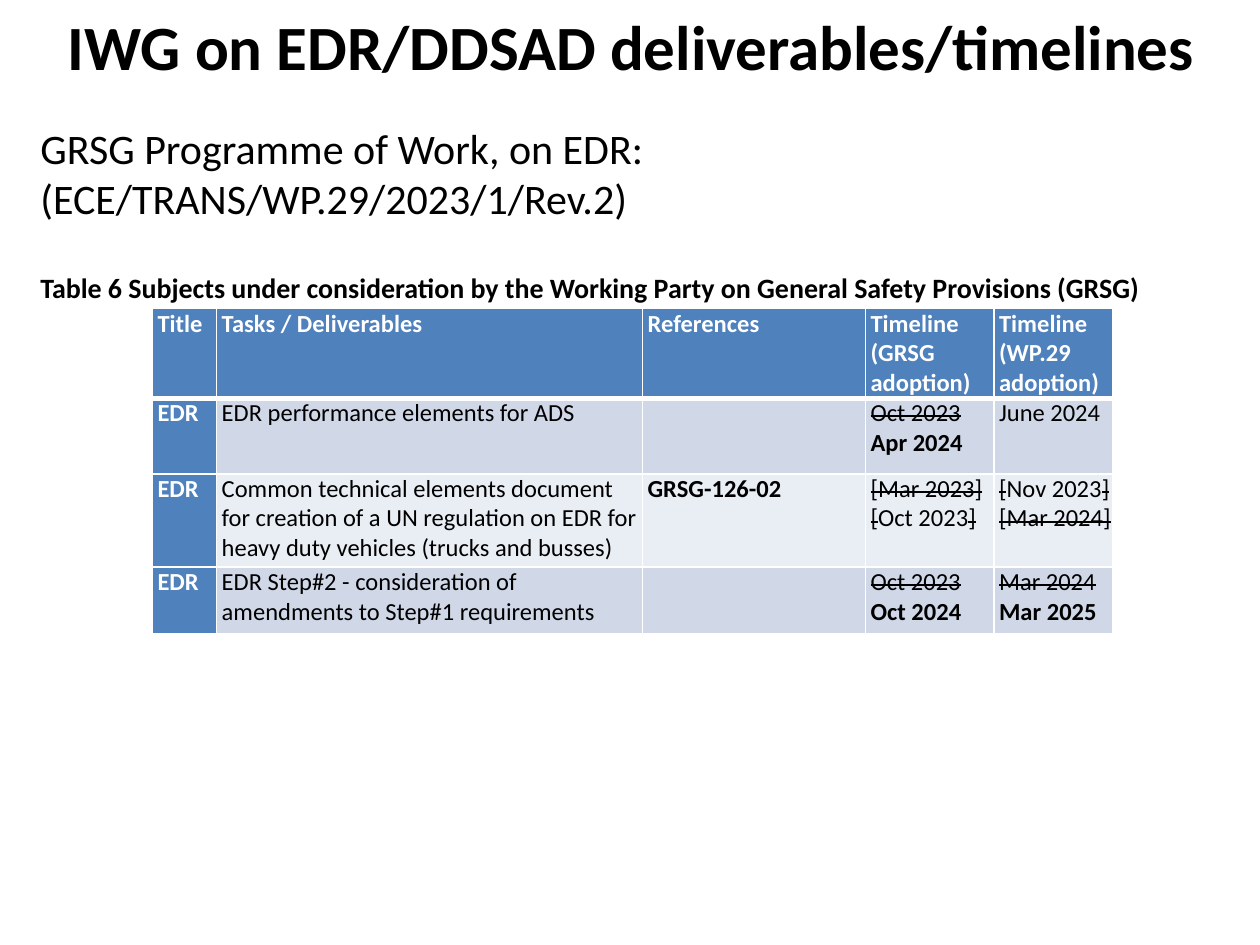
import pptx
import pptx.dml.color
import pptx.enum.text
import pptx.oxml.ns
import pptx.util
from lxml import etree

Inches = pptx.util.Inches
Pt = pptx.util.Pt

FONT = "Calibri"
BLACK, WHITE = "000000", "FFFFFF"
HEADER_BLUE = "4F81BD"
BANDS = ("D0D8E8", "E9EDF4")
PLAIN, BOLD, STRUCK = "plain", "bold", "struck"

COLUMN_WIDTHS = (0.51, 3.38, 1.77, 1.02, 0.94)
ROW_HEIGHTS = (0.68, 0.6, 0.74, 0.53)

# Header cells: one entry per paragraph
HEADERS = (
    ("Title",),
    ("Tasks / Deliverables",),
    ("References",),
    ("Timeline", "(GRSG adoption)"),
    ("Timeline", "(WP.29 adoption)"),
)

# Body cells after the "EDR" column: runs of (text, style)
SUBJECTS = (
    (
        [("EDR performance elements for ADS", PLAIN)],
        [],
        [("Oct 2023\n", STRUCK), ("Apr 2024", BOLD)],
        [("June 2024", PLAIN)],
    ),
    (
        [("Common technical elements document for creation of a UN regulation "
          "on EDR for heavy duty vehicles (trucks and busses)", PLAIN)],
        [("GRSG-126-02", BOLD)],
        [("[Mar 2023]\n[", STRUCK), ("Oct 2023", PLAIN), ("]", STRUCK)],
        [("[", STRUCK), ("Nov 2023", PLAIN), ("]\n[Mar 2024]", STRUCK)],
    ),
    (
        [("EDR Step#2 - consideration of amendments to Step#1 requirements", PLAIN)],
        [],
        [("Oct 2023\n", STRUCK), ("Oct 2024", BOLD)],
        [("Mar 2024\n", STRUCK), ("Mar 2025", BOLD)],
    ),
)


def color(hex_string):
    return pptx.dml.color.RGBColor.from_string(hex_string)


def add_child(parent, tag, **attributes):
    return etree.SubElement(parent, pptx.oxml.ns.qn(tag), **attributes)


def add_text(paragraph, text, size, hex_color=BLACK, style=PLAIN):
    """Add text as runs, turning each newline into a line break."""
    for index, line in enumerate(text.split("\n")):
        if index:
            paragraph.add_line_break()
            add_child(paragraph._p[-1], "a:rPr", sz=str(size * 100))
        if not line:
            continue
        run = paragraph.add_run()
        run.text = line
        run.font.name = FONT
        run.font.size = Pt(size)
        run.font.bold = style == BOLD
        run.font.color.rgb = color(hex_color)
        if style == STRUCK:
            run.font._element.set("strike", "sngStrike")


def set_spacing(paragraph, before, after=0):
    paragraph.space_before = Pt(before)
    paragraph.space_after = Pt(after)


def place(shape, left, top, width, height):
    shape.left, shape.top = Inches(left), Inches(top)
    shape.width, shape.height = Inches(width), Inches(height)


def fill_title(title):
    place(title, 0.01, 0.13, 10, 0.46)
    frame = title.text_frame
    frame.auto_size = pptx.enum.text.MSO_AUTO_SIZE.NONE
    frame.vertical_anchor = pptx.enum.text.MSO_ANCHOR.MIDDLE
    paragraph = frame.paragraphs[0]
    paragraph.alignment = pptx.enum.text.PP_ALIGN.CENTER
    add_text(paragraph, "IWG on EDR/DDSAD deliverables/timelines", 36, style=BOLD)


def fill_body(body):
    place(body, 0.22, 0.92, 9.74, 6.06)
    frame = body.text_frame
    frame.auto_size = pptx.enum.text.MSO_AUTO_SIZE.NONE
    programme, caption = frame.paragraphs[0], frame.add_paragraph()
    for paragraph, before in ((programme, 6.4), (caption, 27.4)):
        set_spacing(paragraph, before)
        properties = paragraph._p.get_or_add_pPr()
        properties.set("marL", "0")
        properties.set("indent", "0")
        add_child(properties, "a:buNone")
    add_text(programme, "GRSG Programme of Work, on EDR:\n(ECE/TRANS/WP.29/2023/1/Rev.2)", 24)
    add_text(caption, "Table 6 Subjects under consideration by the Working Party "
                      "on General Safety Provisions (GRSG)", 16, style=BOLD)


def format_cell(cell, fill, top_border=1, bottom_border=1):
    cell.margin_left = cell.margin_right = cell.margin_top = cell.margin_bottom = 0
    properties = cell._tc.get_or_add_tcPr()
    borders = (("a:lnL", 1), ("a:lnR", 1), ("a:lnT", top_border), ("a:lnB", bottom_border))
    for tag, width in borders:
        line = add_child(properties, tag, w=str(Pt(width)))
        add_child(add_child(line, "a:solidFill"), "a:srgbClr", val=WHITE)
    cell.fill.solid()
    cell.fill.fore_color.rgb = color(fill)


def write_cell(cell, paragraphs, hex_color, before, after):
    """Write paragraphs, each a list of (text, style) runs."""
    frame = cell.text_frame
    for index, runs in enumerate(paragraphs):
        paragraph = frame.add_paragraph() if index else frame.paragraphs[0]
        set_spacing(paragraph, before, after)
        paragraph._p.get_or_add_pPr().set("marL", str(Inches(0.04)))
        for text, style in runs:
            add_text(paragraph, text, 14, hex_color, style)


def add_subjects_table(slide):
    frame = slide.shapes.add_table(
        len(ROW_HEIGHTS), len(COLUMN_WIDTHS), Inches(1.21), Inches(2.45),
        Inches(sum(COLUMN_WIDTHS)), Inches(sum(ROW_HEIGHTS)))
    table = frame.table
    table.first_row = table.horz_banding = False
    for column, width in zip(table.columns, COLUMN_WIDTHS):
        column.width = Inches(width)
    for row, height in zip(table.rows, ROW_HEIGHTS):
        row.height = Inches(height)

    # Header row
    for column, lines in enumerate(HEADERS):
        cell = table.cell(0, column)
        format_cell(cell, HEADER_BLUE, bottom_border=3)
        spacing = 4 if len(lines) == 1 else 0
        write_cell(cell, [[(line, BOLD)] for line in lines], WHITE, spacing, spacing)

    # Subject rows, with a blue first column and alternating bands
    for row, subject in enumerate(SUBJECTS, start=1):
        band = BANDS[(row - 1) % 2]
        for column, runs in enumerate(([("EDR", BOLD)],) + subject):
            cell = table.cell(row, column)
            fill, text_color = (band, BLACK) if column else (HEADER_BLUE, WHITE)
            format_cell(cell, fill, top_border=3 if row == 1 else 1)
            write_cell(cell, [runs], text_color, 2, 6)


def main():
    presentation = pptx.Presentation()
    presentation.slide_width, presentation.slide_height = Inches(10), Inches(7.5)
    slide = presentation.slides.add_slide(presentation.slide_layouts[1])
    fill_title(slide.shapes.title)
    fill_body(slide.placeholders[1])
    add_subjects_table(slide)
    presentation.save("out.pptx")


if __name__ == "__main__":
    main()
